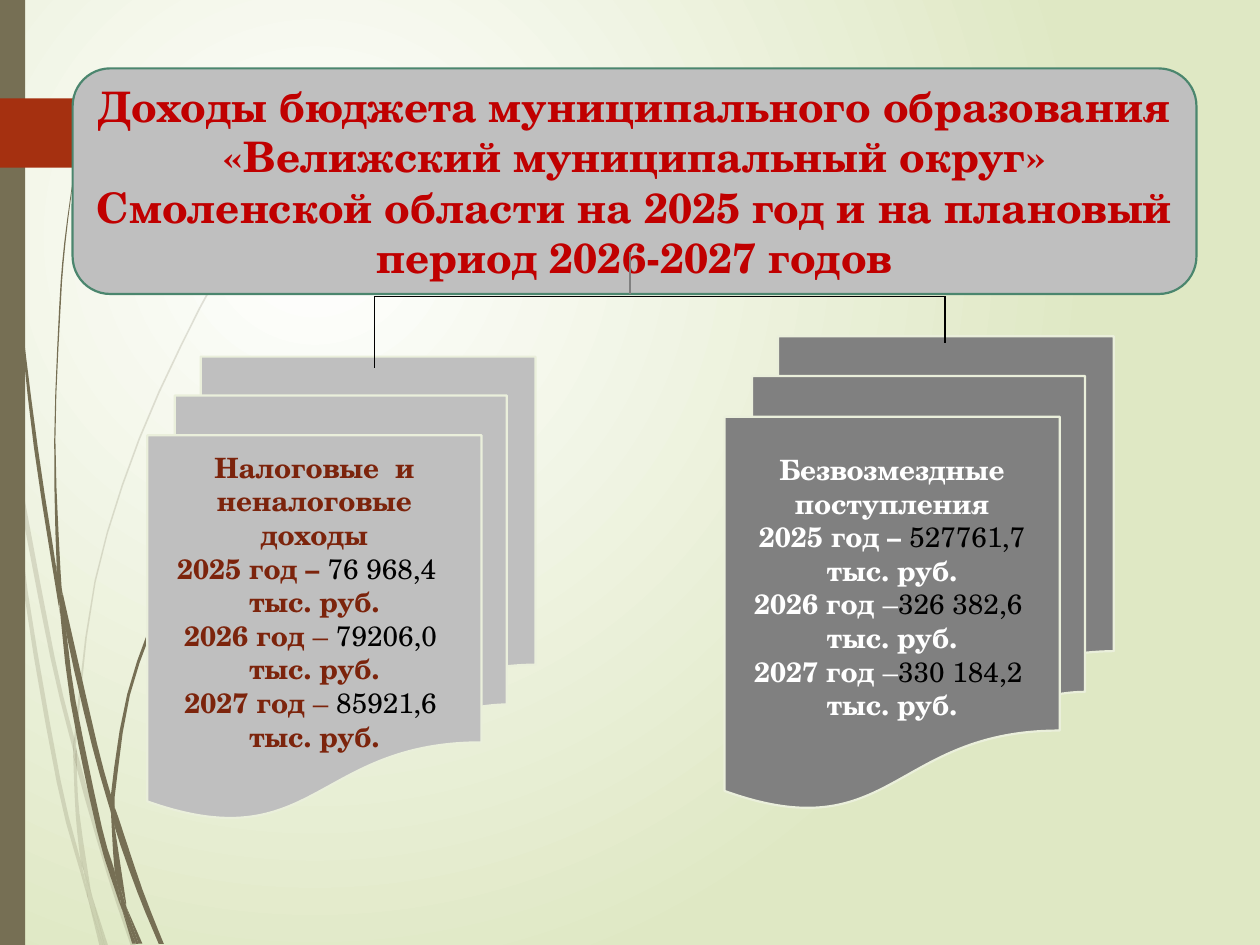
from lxml import etree
from pptx import Presentation
from pptx.dml.color import RGBColor
from pptx.enum.shapes import MSO_CONNECTOR, MSO_SHAPE
from pptx.enum.text import MSO_ANCHOR, PP_ALIGN
from pptx.oxml.ns import qn
from pptx.util import Pt

STRAIGHT = MSO_CONNECTOR.STRAIGHT
RECTANGLE = MSO_SHAPE.RECTANGLE
ROUNDED = MSO_SHAPE.ROUNDED_RECTANGLE
DOCUMENTS = MSO_SHAPE.FLOWCHART_MULTIDOCUMENT
MIDDLE = MSO_ANCHOR.MIDDLE
CENTER = PP_ALIGN.CENTER

FONT = "TeX Gyre Schola"
WHITE = RGBColor(0xFF, 0xFF, 0xFF)
BLACK = RGBColor(0x00, 0x00, 0x00)
PALE_GREEN = RGBColor(0xDF, 0xE8, 0xC4)
CREAM = RGBColor(0xEA, 0xEF, 0xDB)
OLIVE = RGBColor(0x76, 0x6F, 0x54)
RUST = RGBColor(0xA5, 0x30, 0x10)
BROWN = RGBColor(0x7C, 0x24, 0x0C)
RED = RGBColor(0xC0, 0x00, 0x00)
GREEN = RGBColor(0x4B, 0x86, 0x6E)
LIGHT_GRAY = RGBColor(0xBF, 0xBF, 0xBF)
DARK_GRAY = RGBColor(0x80, 0x80, 0x80)

TITLE = ("Доходы бюджета муниципального образования «Велижский муниципальный "
         "округ» Смоленской области на 2025 год и на плановый период "
         "2026-2027 годов")
UNIT = "тыс. руб."

ARROW = [(0, 56.2), (87.1, 56.2), (107.5, 76), (87.1, 95.8), (0, 95.8)]
PALE_BLADES = [
    ([(0, 203), (4.3, 231.8), (5.8, 252)], [(0, 215.3), (5, 247.7)]),
    ([(7.2, 248.4), (8.6, 270.7), (28.8, 375.8), (42.5, 431.3)],
     [(7.2, 248.4), (31, 374.4), (42.5, 421.9)]),
    ([(43.9, 429.1), (43.9, 439.2), (61.2, 499.7), (74.9, 540.7)],
     [(43.9, 429.1), (46.1, 437), (63.4, 498.2), (77.8, 540.7)]),
    ([(52.6, 511.9), (59.8, 540.7)], [(61.9, 540.7)]),
    ([(5.8, 252), (13.7, 338.4), (32.4, 447.1), (46.1, 499), (50.4, 514.1)],
     [(5.8, 252), (8.6, 270.7), (15.8, 337.7), (34.6, 445.7), (46.1, 491.8), (49.7, 509)]),
    ([(41.8, 431.3), (43.2, 465.1), (46.1, 491.8), (48.2, 498.2), (52.6, 511.9)],
     [(41.8, 431.3), (43.9, 437.8), (43.9, 439.2), (45.4, 465.1), (51.8, 508.3)]),
    ([(156.2, 110.2), (144.5, 126), (133.9, 141.8), (113.8, 175.7), (79.2, 250.6),
      (54, 331.9), (42.5, 420.5), (42.5, 421.9)],
     [(156.2, 110.9), (144.7, 126), (134.6, 142.6), (114.5, 176.4), (79.9, 251.3),
      (54.7, 332.6), (43.9, 420.5), (43.9, 429.1)]),
    ([(50.4, 514.1), (56.9, 540.7)], [(59, 540.7)]),
    ([(42.5, 421.9), (41.8, 431.3), (43.9, 437.8)], [(43.9, 429.1), (43.9, 439.2)]),
    ([(46.8, 491.8), (49.7, 509), (50.4, 514.1), (59, 540.7)],
     [(48.2, 498.2), (52.6, 511.9), (59.8, 540.7)]),
]
DARK_BLADES = [
    ([(1.4, 0), (2.2, 34.6), (3.6, 79.2), (10.1, 167.8), (19.4, 255.6), (33.1, 343.4),
      (33.8, 346.3)],
     [(2.2, 0), (2.9, 34.6), (4.3, 78.5), (10.8, 167), (21.6, 255.6), (32.4, 326.2),
      (33.8, 346.3)]),
    ([(36, 339.8), (38.2, 363.6), (52.6, 426.2), (63.4, 464.4)],
     [(36, 339.8), (55.4, 424.8), (63.4, 454.3)]),
    ([(65.5, 461.5), (65.5, 472.3), (78.5, 509.8), (90.7, 539.3)],
     [(65.5, 461.5), (67.7, 467.3), (81.4, 508.3), (93.6, 539.3)]),
    ([(33.8, 343.4), (40.3, 401), (55.4, 474.5), (66.2, 509.8), (69.8, 519.8)],
     [(33.8, 343.4), (38.2, 363.6), (43.2, 400.3), (58.3, 473), (65.5, 497.5),
      (69.1, 516.2)]),
    ([(41.8, 101.5), (36.7, 139), (33.8, 176.4), (31, 251.3), (32.4, 323.3), (35.3, 339.8)],
     [(42.1, 101.5), (37.4, 139), (34.6, 176.4), (31.7, 251.3), (34.6, 326.2), (36, 339.8)]),
    ([(72, 517.7), (79.2, 539.3)], [(81.4, 539.3)]),
    ([(32.4, 323.3), (32.4, 326.2), (33.8, 343.4), (38.2, 363.6)],
     [(35.3, 339.8), (36, 339.8)]),
    ([(154.8, 247.7), (146.2, 257.8), (137.5, 268.6), (121, 291.6), (92.9, 341.3),
      (72.7, 396.7), (63.4, 454.3), (65.5, 461.5)],
     [(155.5, 247.7), (146.2, 258.5), (137.5, 269.3), (121.7, 292.3), (94.3, 342.7),
      (74.2, 397.4), (65.5, 455.8)]),
    ([(69.8, 519.8), (75.6, 539.3)], [(77.8, 539.3)]),
    ([(63.4, 464.4), (65.5, 497.5), (69.1, 508.3), (72, 517.7)],
     [(63.4, 464.4), (64.8, 468.7), (65.5, 472.3), (72, 515.5)]),
    ([(63.4, 454.3), (63.4, 464.4), (65.5, 472.3)], [(65.5, 461.5)]),
    ([(65.5, 497.5), (69.1, 516.2), (69.8, 519.8), (77.8, 539.3)],
     [(69.1, 508.3), (72, 517.7), (79.2, 539.3)]),
]


def set_background(slide):
    """Fill the background with a circular gradient."""
    fill = slide.background.fill
    fill.gradient()
    for stop, color, position in zip(fill.gradient_stops, (WHITE, PALE_GREEN), (0, 1)):
        stop.color.rgb = color
        stop.position = position
    gradient = slide.element.find(".//" + qn("a:gradFill"))
    circle = etree.Element(qn("a:path"), path="circle")
    etree.SubElement(circle, qn("a:fillToRect"), l="50000", t="50000", r="100000", b="100000")
    gradient.replace(gradient.find(qn("a:lin")), circle)


def smooth_side(knots, steps=3):
    """Return points on a Catmull-Rom curve through the knots."""
    padded = [knots[0], *knots, knots[-1]]
    points = []
    for neighbours in zip(padded, padded[1:], padded[2:], padded[3:]):
        for t in (step / steps for step in range(steps)):
            points.append(tuple(
                b + ((c - a) * t + (2 * a - 5 * b + 4 * c - d) * t ** 2
                     + (3 * b - a - 3 * c + d) * t ** 3) / 2
                for a, b, c, d in zip(*neighbours)))
    return points + [knots[-1]]


def style_shape(shape, fill, line=None):
    """Set the fill and outline of a shape and drop its shadow."""
    shape.shadow.inherit = False
    shape.fill.solid()
    shape.fill.fore_color.rgb = fill
    if line is None:
        shape.line.fill.background()
    else:
        shape.line.color.rgb = line
        shape.line.width = Pt(1.25)


def add_outline(slide, points, fill, alpha=100):
    """Draw a closed outline with an opacity in percent."""
    corners = [(Pt(x), Pt(y)) for x, y in points]
    builder = slide.shapes.build_freeform(*corners[0])
    builder.add_line_segments(corners[1:], close=True)
    shape = builder.convert_to_shape()
    style_shape(shape, fill)
    if alpha < 100:
        color = shape.element.spPr.find(qn("a:solidFill"))[0]
        etree.SubElement(color, qn("a:alpha"), val=str(alpha * 1000))


def add_block(slide, kind, box, fill, line=None):
    """Add a preset shape at (left, top, width, height)."""
    shape = slide.shapes.add_shape(kind, *map(Pt, box))
    style_shape(shape, fill, line)
    return shape


def write_text(shape, paragraphs, size):
    """Write centred paragraphs of (text, color, bold) runs."""
    frame = shape.text_frame
    frame.word_wrap = True
    frame.vertical_anchor = MIDDLE
    for index, runs in enumerate(paragraphs):
        paragraph = frame.add_paragraph() if index else frame.paragraphs[0]
        paragraph.alignment = CENTER
        for text, color, bold in runs:
            run = paragraph.add_run()
            run.text = text
            run.font.name, run.font.size, run.font.bold = FONT, Pt(size), bold
            run.font.color.rgb = color


def add_income(slide, box, fill, color, paragraphs):
    """Add a stack of documents listing one kind of income."""
    shape = add_block(slide, DOCUMENTS, box, fill, CREAM)
    write_text(shape, [[(text, BLACK if value else color, bold)
                        for text, value, bold in runs] for runs in paragraphs], 16)
    shape.text_frame.margin_bottom = Pt(22.8)


def year_runs(year, dash, amount):
    """Return the runs of a yearly amount."""
    return [(f"{year} год ", False, True), (dash, False, False),
            (amount + "  ", True, False), (UNIT, False, True)]


def add_line(slide, start, end, color=BLACK):
    """Draw a thin straight line between two points."""
    line = slide.shapes.add_connector(STRAIGHT, *map(Pt, start + end))
    line.line.color.rgb = color
    line.line.width = Pt(0.75)
    etree.SubElement(line.element.spPr, qn("a:effectLst"))


def main():
    """Build the budget income slide."""
    presentation = Presentation()
    presentation.slide_width, presentation.slide_height = Pt(720), Pt(540)
    slide = presentation.slides.add_slide(presentation.slide_layouts[6])
    set_background(slide)
    for blades, alpha in ((PALE_BLADES, 20), (DARK_BLADES, 100)):
        for left, right in blades:
            add_outline(slide, smooth_side(left) + smooth_side(right)[::-1], OLIVE, alpha)
    add_block(slide, RECTANGLE, (0, 0, 14.4, 540), OLIVE)
    add_outline(slide, ARROW, RUST)
    add_income(slide, (414, 192.2, 222.5, 270), DARK_GRAY, WHITE, [
        [("Безвозмездные поступления", False, True)],
        [("2025 год – ", False, True), ("527761,7 ", True, False), (UNIT, False, True)],
        year_runs(2026, "–", "326 382,6"), year_runs(2027, "–", "330 184,2")])
    title = add_block(slide, ROUNDED, (41.5, 39.1, 642.2, 128.9), LIGHT_GRAY, GREEN)
    write_text(title, [[(TITLE, RED, True)]], 24)
    left_x, right_x, branch_y = 214, 540, 169.4
    add_line(slide, (left_x, branch_y), (right_x, branch_y))
    add_income(slide, (84.2, 203.8, 221.8, 264.2), LIGHT_GRAY, BROWN, [
        [("Налоговые  и неналоговые доходы", False, True)],
        [("2025 год – ", False, True), ("76 968,4  ", True, False)],
        [(UNIT, False, True)],
        year_runs(2026, "– ", "79206,0"), year_runs(2027, "– ", "85921,6")])
    add_line(slide, (left_x, branch_y), (left_x, 210.2))
    add_line(slide, (right_x, branch_y), (right_x, 195.8))
    add_line(slide, (360, 144), (360, 167.8), DARK_GRAY)
    presentation.save("out.pptx")


if __name__ == "__main__":
    main()
